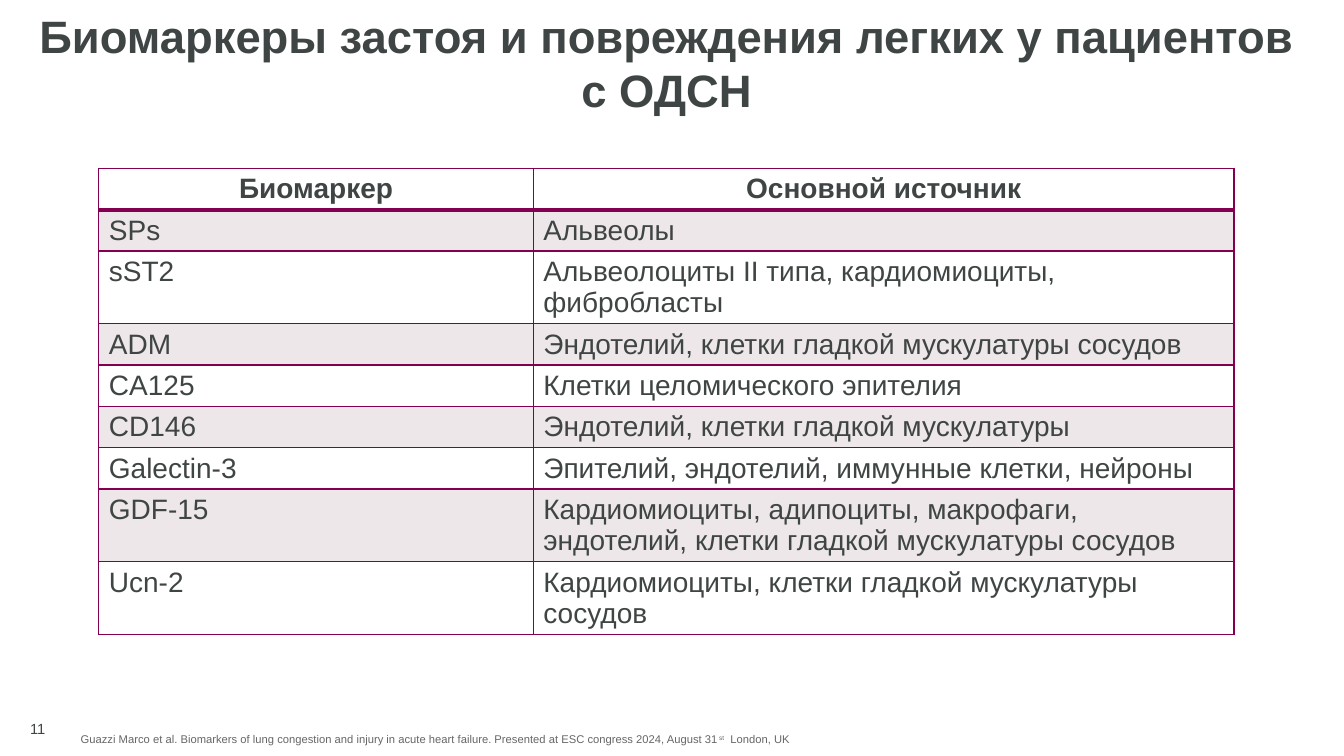
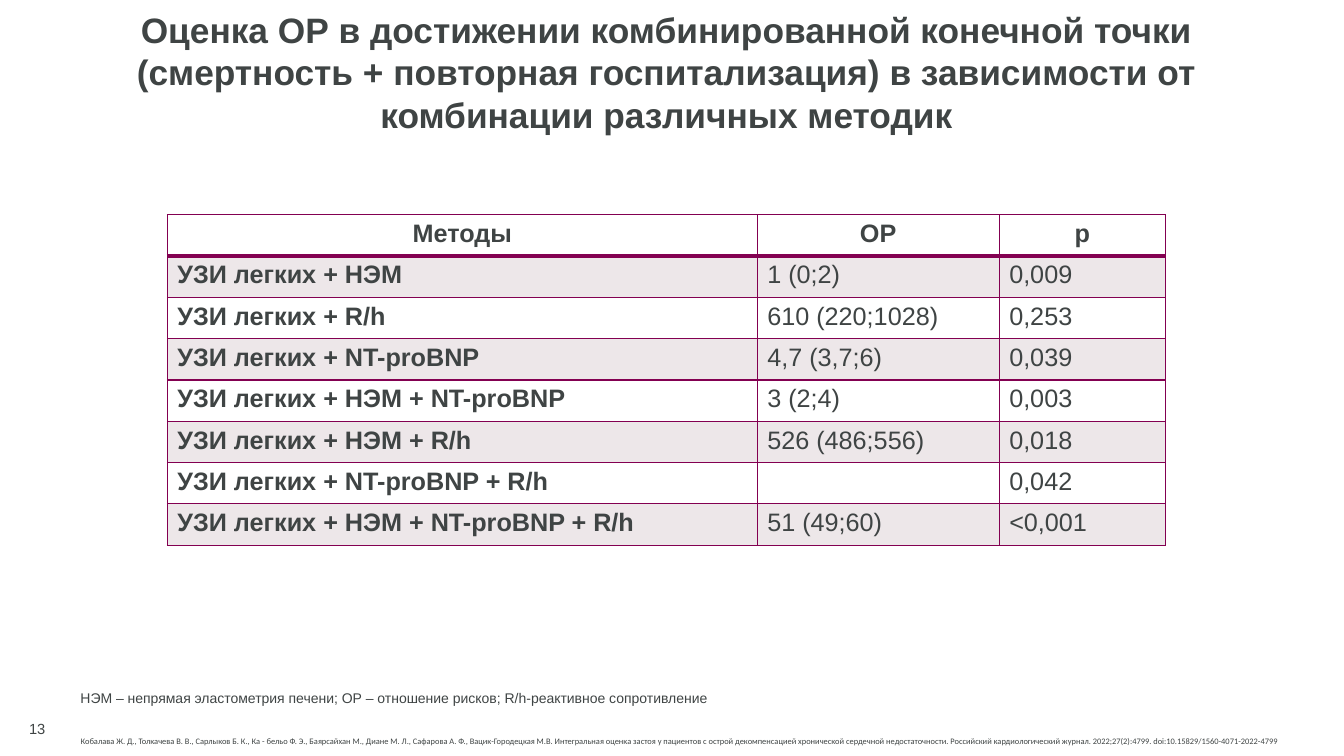
import pptx
import pptx.dml.color
import pptx.enum.text
import pptx.oxml
import pptx.oxml.ns
import pptx.util
from pptx.util import Inches

RGBColor = pptx.dml.color.RGBColor
Align = pptx.enum.text.PP_ALIGN
Anchor = pptx.enum.text.MSO_ANCHOR

INK = RGBColor(0x3F, 0x44, 0x44)
GREY = RGBColor(0x66, 0x66, 0x66)
PLUM = RGBColor(0x83, 0x00, 0x51)
BAND = RGBColor(0xED, 0xE7, 0xE9)
WHITE = RGBColor(0xFF, 0xFF, 0xFF)

ROW_HEIGHT = 0.41
THIN, THICK = 1, 3


class TableDeck:
    """Holds the shared style and the slide being filled."""

    title_format = {"name": "Arial", "bold": True}
    text_format = {"name": "Arial", "bold": False}
    source_format = {"name": "Arial", "size": 8, "color": GREY}

    def __init__(self):
        self.deck = pptx.Presentation()
        self.deck.slide_width = Inches(13.33)
        self.deck.slide_height = Inches(7.5)
        self.slide = None

    def add_slide(self, number):
        self.slide = self.deck.slides.add_slide(self.deck.slide_layouts[1])
        box = self.slide.shapes.add_textbox(0, 0, 0, 0)
        self.place(box, 0, 7.06, 0.45, 0.34)
        self.set_frame(box, Anchor.BOTTOM, (0, 0, 0, 0.08))
        para = box.text_frame.paragraphs[0]
        para.alignment = Align.RIGHT
        self.add_run(para, number, size=10.5, **self.text_format)

    def place(self, shape, left, top, width, height):
        for side, value in {"left": left, "top": top, "width": width, "height": height}.items():
            setattr(shape, side, Inches(value))

    def set_frame(self, shape, anchor, insets=(0.1, 0.05, 0.1, 0.05)):
        frame = shape.text_frame
        frame.word_wrap = True
        frame.auto_size = pptx.enum.text.MSO_AUTO_SIZE.NONE
        frame.vertical_anchor = anchor
        for side, inset in zip(("left", "top", "right", "bottom"), insets):
            setattr(frame, "margin_" + side, Inches(inset))

    def add_run(self, para, text, color=INK, size=18, **font_format):
        span = para.add_run()
        span.text = text
        span.font.size = pptx.util.Pt(size)
        span.font.color.rgb = color
        for name, value in font_format.items():
            setattr(span.font, name, value)
        return span

    def add_title(self, text, size, height):
        title = self.slide.shapes.title
        self.place(title, 0.39, 0.08, 12.44, height)
        self.set_frame(title, Anchor.TOP, (0, 0, 0, 0))
        para = title.text_frame.paragraphs[0]
        para.alignment = Align.CENTER
        self.add_run(para, text, size=size, **self.title_format)

    def add_source(self, pieces, **changes):
        """Fill the body with the citation; every second piece is superscript."""
        body = self.slide.placeholders[1]
        self.place(body, 0.7, 7.16, 12.35, 0.29)
        self.set_frame(body, Anchor.BOTTOM)
        para = body.text_frame.paragraphs[0]
        properties = para._p.get_or_add_pPr()
        properties.set("marL", "0")
        properties.set("indent", "0")
        properties.append(pptx.oxml.parse_xml(f"<a:buNone {pptx.oxml.ns.nsdecls('a')}/>"))
        para.space_before = pptx.util.Pt(0)
        for index, piece in enumerate(pieces):
            span = self.add_run(para, piece, **{**self.source_format, **changes})
            if index % 2:
                span._r.get_or_add_rPr().set("baseline", "30000")

    def add_note(self, text):
        box = self.slide.shapes.add_textbox(0, 0, 0, 0)
        self.place(box, 0.7, 6.81, 9.46, 0.25)
        self.set_frame(box, Anchor.TOP)
        para = box.text_frame.paragraphs[0]
        para.line_spacing = 0.9
        self.add_run(para, text, size=10, **self.text_format)

    def set_borders(self, cell, top, bottom):
        properties = cell._tc.get_or_add_tcPr()
        for side, width in {"L": THIN, "R": THIN, "T": top, "B": bottom}.items():
            properties.append(pptx.oxml.parse_xml(
                f"<a:ln{side} {pptx.oxml.ns.nsdecls('a')} w='{pptx.util.Pt(width)}'>"
                f"<a:solidFill><a:srgbClr val='{PLUM}'/></a:solidFill></a:ln{side}>"))

    def add_table(self, left, top, widths, rows, size, bold_first=False):
        """Draw a table whose first row is the header, above alternating bands."""
        table = self.slide.shapes.add_table(
            len(rows), len(widths), Inches(left), Inches(top),
            Inches(sum(widths)), Inches(ROW_HEIGHT * len(rows))).table
        for column, width in zip(table.columns, widths):
            column.width = Inches(width)
        for row_index, row in enumerate(rows):
            header = row_index == 0
            for column_index, text in enumerate(row):
                cell = table.cell(row_index, column_index)
                self.set_borders(cell, THICK if row_index == 1 else THIN,
                                 THICK if header else THIN)
                cell.fill.solid()
                cell.fill.fore_color.rgb = BAND if row_index % 2 else WHITE
                para = cell.text_frame.paragraphs[0]
                para.alignment = Align.CENTER if header else Align.LEFT
                bold = header or (bold_first and column_index == 0)
                if text:
                    self.add_run(para, text, size=size, **{**self.text_format, "bold": bold})


BIOMARKERS = [
    ("Биомаркер", "Основной источник"),
    ("SPs", "Альвеолы"),
    ("sST2", "Альвеолоциты II типа, кардиомиоциты, фибробласты"),
    ("ADM", "Эндотелий, клетки гладкой мускулатуры сосудов"),
    ("CA125", "Клетки целомического эпителия"),
    ("CD146", "Эндотелий, клетки гладкой мускулатуры"),
    ("Galectin-3", "Эпителий, эндотелий, иммунные клетки, нейроны"),
    ("GDF-15", "Кардиомиоциты, адипоциты, макрофаги, эндотелий, клетки гладкой мускулатуры сосудов"),
    ("Ucn-2", "Кардиомиоциты, клетки гладкой мускулатуры сосудов"),
]

RISKS = [
    ("Методы", "ОР", "p"),
    ("УЗИ легких + НЭМ", "1 (0;2)", "0,009"),
    ("УЗИ легких + R/h", "610 (220;1028)", "0,253"),
    ("УЗИ легких + NT-proBNP", "4,7 (3,7;6)", "0,039"),
    ("УЗИ легких + НЭМ + NT-proBNP", "3 (2;4)", "0,003"),
    ("УЗИ легких + НЭМ + R/h", "526 (486;556)", "0,018"),
    ("УЗИ легких + NT-proBNP + R/h", "", "0,042"),
    ("УЗИ легких + НЭМ + NT-proBNP + R/h", "51 (49;60)", "<0,001"),
]


def main():
    talk = TableDeck()

    talk.add_slide("11")
    talk.add_title("Биомаркеры застоя и повреждения легких у пациентов с ОДСН", 32.4, 1.1)
    talk.add_table(0.98, 1.67, (4.31, 6.95), BIOMARKERS, 20)
    talk.add_source((
        "Guazzi Marco et al. Biomarkers of lung congestion and injury in acute heart failure. "
        "Presented at ESC congress 2024, August 31", "st", "  London, UK"))

    talk.add_slide("13")
    talk.add_title(
        "Оценка ОР в достижении комбинированной конечной точки (смертность + повторная "
        "госпитализация) в зависимости от комбинации различных методик", 25.2, 1.26)
    talk.add_table(1.66, 2.13, (5.85, 2.4, 1.65), RISKS, 18, bold_first=True)
    talk.add_note("НЭМ – непрямая эластометрия печени; ОР – отношение рисков; "
                  "R/h-реактивное сопротивление")
    talk.add_source((
        "Кобалава Ж. Д., Толкачева В. В., Сарлыков Б. К., Ка - бельо Ф. Э., Баярсайхан М., "
        "Диане М. Л., Сафарова А. Ф., Вацик-Городецкая М.В. Интегральная оценка застоя у "
        "пациентов с острой декомпенсацией хронической сердечной недостаточности. Российский "
        "кардиологический журнал. 2022;27(2):4799. doi:10.15829/1560-4071-2022-4799",),
        name="Calibri", size=6, color=INK)

    talk.deck.save("out.pptx")


if __name__ == "__main__":
    main()
